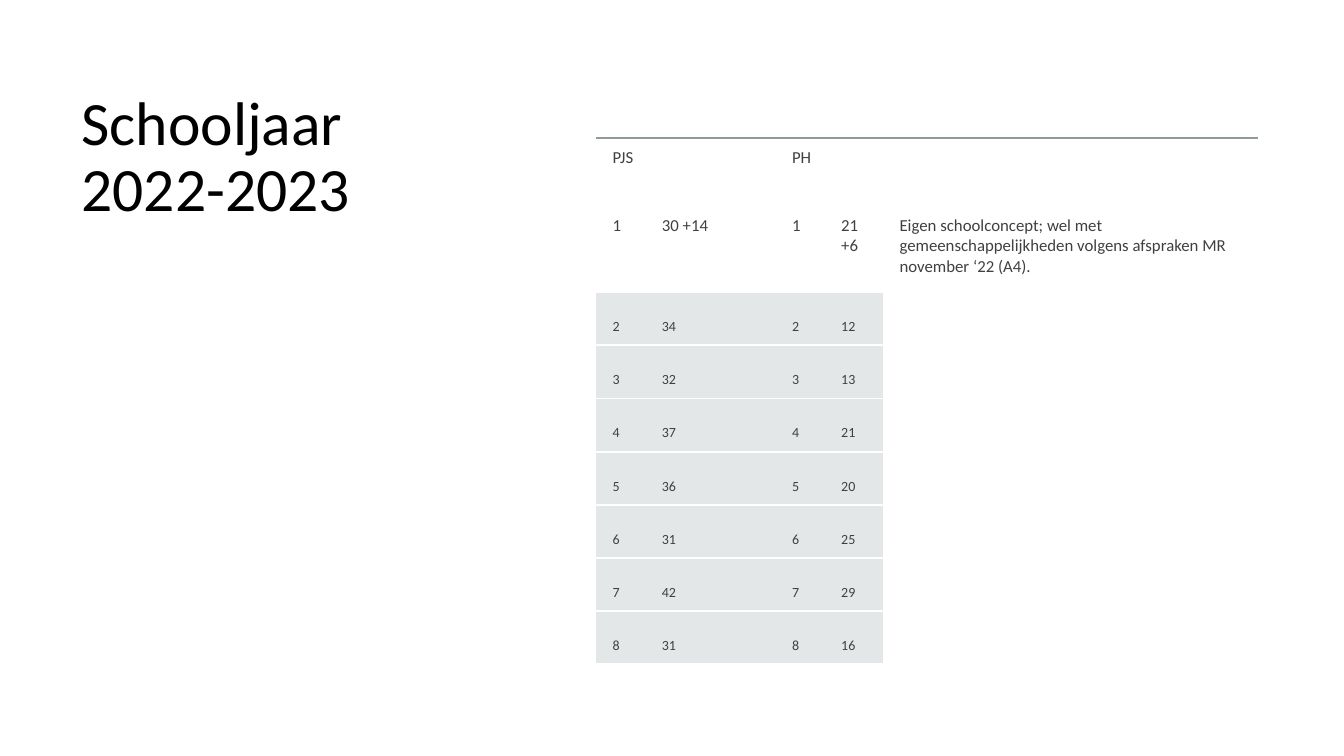
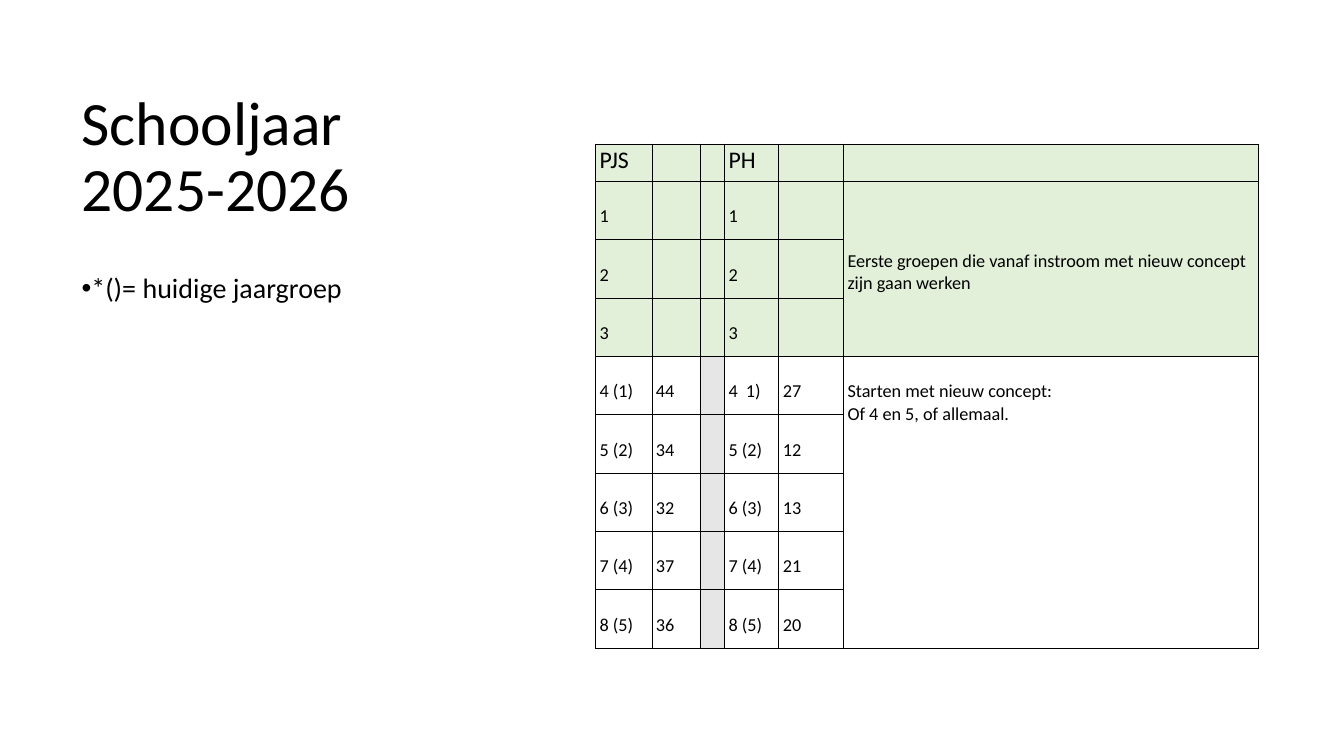
"""Build two slides that set out the pupil numbers of two schools by school year."""
from lxml import etree
from pptx import Presentation
from pptx.dml.color import RGBColor
from pptx.enum import text as t
from pptx.oxml.ns import qn
from pptx.util import Cm, Pt

BLACK = RGBColor(0x00, 0x00, 0x00)
WHITE = RGBColor(0xFF, 0xFF, 0xFF)
CHARCOAL = RGBColor(0x40, 0x40, 0x40)
RULE = RGBColor(0x8F, 0x9A, 0x9D)
MIST = RGBColor(0xE4, 0xE7, 0xE8)
GREEN = RGBColor(0xE2, 0xEF, 0xD9)
SILVER = RGBColor(0xE7, 0xE6, 0xE6)
FONT = "Calibri"

TITLE_BOX = (1.8, 1.75, 9.73, 4.5)
BODY_BOX = (1.8, 6.78, 9.73, 10.52)
TABLE_LEFT = 15.01
GAP_COLUMN, NOTE_COLUMN = 2, 5
SIDES = ("lnL", "lnR", "lnT", "lnB")

GRID = dict.fromkeys(SIDES, (BLACK, 0.75))
WHITE_RULES = dict.fromkeys(("lnT", "lnB"), (WHITE, 1.5))

SHEETS = [
    {
        "title": "Schooljaar 2022-2023",
        "body": None,
        "top": 3.48,
        "columns": (1.24, 2.24, 1.04, 1.24, 1.47, 9.47),
        "margins": {"margin_left": 0.43, "margin_right": 0.25, "margin_bottom": 0.1},
        "ink": CHARCOAL,
        "bands": [
            {"height": 1.19, "size": 12, "inset": 0.25, "fill": WHITE,
             "borders": {"lnT": (RULE, 1.5)},
             "records": [("PJS", "", "PH", "")]},
            {"height": 2.69, "size": 12, "inset": 0.76, "fill": WHITE, "borders": {},
             "records": [("1", "30 +14", "1", "21\n+6")]},
            {"height": 1.34, "size": 10, "inset": 0.66, "fill": MIST, "borders": WHITE_RULES,
             "records": [("2", "34", "2", "12"), ("3", "32", "3", "13"),
                         ("4", "37", "4", "21"), ("5", "36", "5", "20"),
                         ("6", "31", "6", "25"), ("7", "42", "7", "29"),
                         ("8", "31", "8", "16")]},
        ],
        "notes": {1: (8, 0.76, "Eigen schoolconcept; wel met gemeenschappelijkheden "
                               "volgens afspraken MR november ‘22 (A4).")},
    },
    {
        "title": "Schooljaar 2025-2026",
        "body": "*()= huidige jaargroep",
        "top": 3.63,
        "columns": (1.42, 1.22, 0.61, 1.37, 1.63, 10.46),
        "margins": {"margin_left": 0.1, "margin_right": 0.1, "margin_bottom": 0.05},
        "ink": BLACK,
        "bands": [
            {"height": 0.94, "size": 17, "inset": 0.05, "fill": GREEN, "borders": GRID,
             "records": [("PJS", "", "PH", "")]},
            {"height": 1.47, "size": 13, "inset": 0.61, "fill": GREEN, "borders": GRID,
             "records": [(grade, "", grade, "") for grade in "123"]},
            {"height": 1.47, "size": 13, "inset": 0.61, "fill": WHITE, "borders": GRID,
             "gap_fill": SILVER,
             "records": [("4 (1)", "44", "4  1)", "27"), ("5 (2)", "34", "5 (2)", "12"),
                         ("6 (3)", "32", "6 (3)", "13"), ("7 (4)", "37", "7 (4)", "21"),
                         ("8 (5)", "36", "8 (5)", "20")]},
        ],
        "notes": {
            1: (3, 1.73, "Eerste groepen die vanaf instroom met nieuw concept zijn gaan werken"),
            4: (8, 0.61, "Starten met nieuw concept:\nOf 4 en 5, of allemaal."),
        },
    },
]


def apply(target, values):
    """Set every attribute named in values."""
    for name, value in values.items():
        setattr(target, name, value)


def style_text(frame, size, ink, para_format):
    """Format all paragraphs and spans of a text frame."""
    for para in frame.paragraphs:
        apply(para, para_format)
        for span in para.runs:
            apply(span.font, {"name": FONT, "size": Pt(size)})
            span.font.color.rgb = ink


def fill_placeholder(shape, words, box, size, anchor, para_format):
    """Place a title or body placeholder and write its text."""
    apply(shape, dict(zip(("left", "top", "width", "height"), map(Cm, box))))
    frame = shape.text_frame
    frame.text = words
    apply(frame, {"word_wrap": True, "auto_size": t.MSO_AUTO_SIZE.NONE,
                  "vertical_anchor": anchor})
    style_text(frame, size, BLACK,
               {"alignment": t.PP_ALIGN.LEFT, "line_spacing": 0.9, **para_format})


def draw_borders(cell, borders):
    """Draw the given sides of a cell and clear the others."""
    properties = cell._tc.get_or_add_tcPr()
    for side in SIDES:
        line = etree.SubElement(properties, qn(f"a:{side}"))
        if side not in borders:
            etree.SubElement(line, qn("a:noFill"))
            continue
        colour, width = borders[side]
        line.set("w", str(Pt(width)))
        paint = etree.SubElement(line, qn("a:solidFill"))
        etree.SubElement(paint, qn("a:srgbClr"), val=str(colour))


def add_numbers(page, sheet):
    """Add the table of pupil numbers with its merged notes."""
    rows = [(band, record) for band in sheet["bands"] for record in band["records"]]
    columns = sheet["columns"]
    heights = [band["height"] for band, _ in rows]
    table = page.shapes.add_table(
        len(rows), len(columns), Cm(TABLE_LEFT), Cm(sheet["top"]),
        Cm(sum(columns)), Cm(sum(heights))).table
    apply(table, {"first_row": False, "horz_banding": False})
    for column, width in zip(table.columns, columns):
        column.width = Cm(width)
    margins = {name: Cm(value) for name, value in sheet["margins"].items()}

    for index, (band, record) in enumerate(rows):
        table.rows[index].height = Cm(band["height"])
        last, note_inset, note = sheet["notes"].get(index, (index, 0.05, ""))
        words = (*record[:2], "", *record[2:], note)
        for position, entry in enumerate(words):
            cell = table.cell(index, position)
            is_note = position == NOTE_COLUMN
            inset = note_inset if is_note else band["inset"] if entry else 0.05
            fill = band["fill"]
            borders = band["borders"]
            if position == GAP_COLUMN:
                fill = band.get("gap_fill", fill)
            elif is_note and fill == MIST:
                fill, borders = WHITE, {}
            cell.text = entry
            apply(cell, {**margins, "margin_top": Cm(inset),
                         "vertical_anchor": t.MSO_ANCHOR.TOP})
            style_text(cell.text_frame, band["size"], sheet["ink"], {})
            draw_borders(cell, borders)
            cell.fill.solid()
            cell.fill.fore_color.rgb = fill

    for first, (last, _, _) in sheet["notes"].items():
        table.cell(first, NOTE_COLUMN).merge(table.cell(last, NOTE_COLUMN))


def main():
    """Build and save the deck."""
    deck = Presentation()
    apply(deck, {"slide_width": Cm(33.87), "slide_height": Cm(19.05)})
    for sheet in SHEETS:
        layout = deck.slide_layouts.get_by_name(
            "Title and Content" if sheet["body"] else "Title Only")
        page = deck.slides.add_slide(layout)
        fill_placeholder(page.shapes.title, sheet["title"], TITLE_BOX, 44,
                         t.MSO_ANCHOR.MIDDLE, {})
        if sheet["body"]:
            body = page.placeholders[1]
            fill_placeholder(body, sheet["body"], BODY_BOX, 20, t.MSO_ANCHOR.TOP,
                             {"space_before": Pt(0), "space_after": Pt(6)})
            for para in body.text_frame.paragraphs:
                indents = para._p.get_or_add_pPr()
                indents.set("marL", "0")
                indents.set("indent", "0")
        add_numbers(page, sheet)
    deck.save("out.pptx")


if __name__ == "__main__":
    main()
